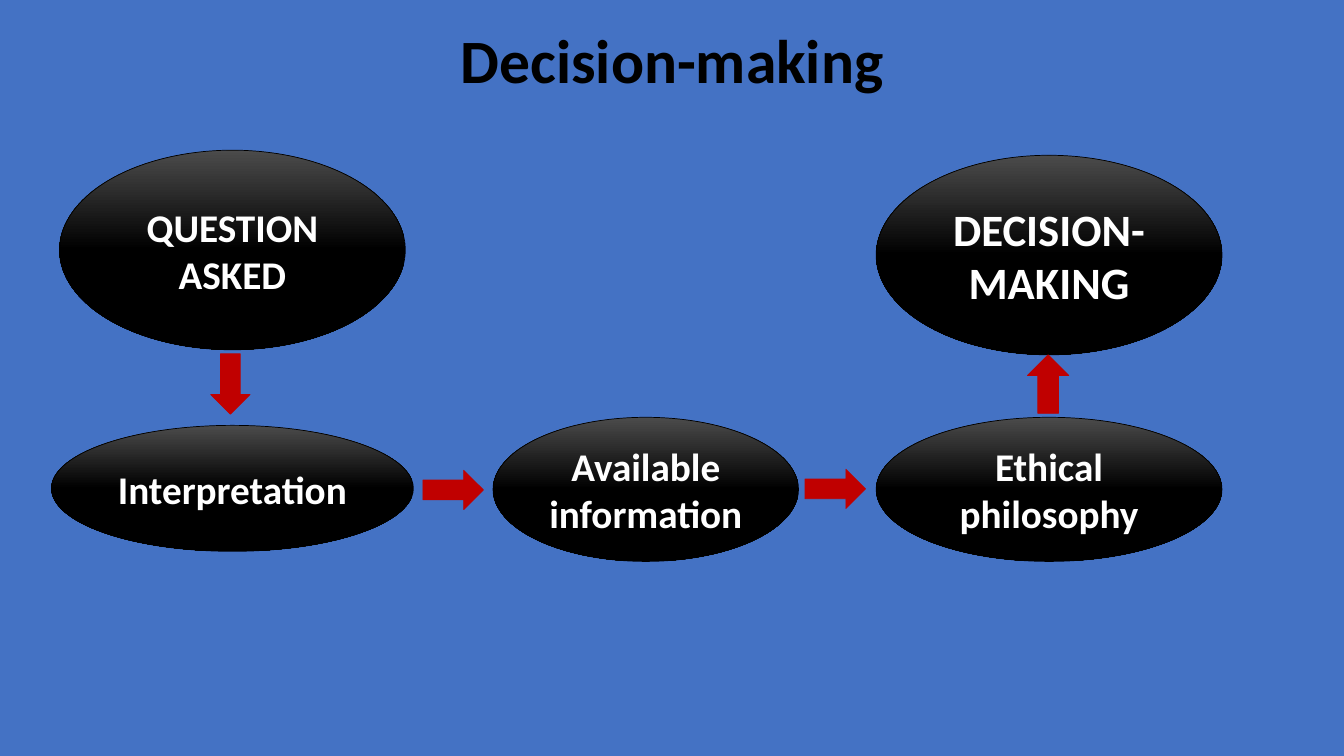
from dataclasses import dataclass

from pptx import Presentation
from pptx.dml.color import RGBColor
from pptx.enum.shapes import MSO_SHAPE as Preset
from pptx.enum.text import MSO_ANCHOR as Anchor, PP_ALIGN as Align
from pptx.shapes.autoshape import Shape
from pptx.slide import Slide
from pptx.util import Inches, Pt


@dataclass(frozen=True)
class Theme:
    """Colours, font and sizes used on the slide."""
    background: RGBColor = RGBColor(0x44, 0x72, 0xC4)
    dark: RGBColor = RGBColor(0, 0, 0)
    sheen: RGBColor = RGBColor(0x4B, 0x4B, 0x4B)
    light: RGBColor = RGBColor(0xFF, 0xFF, 0xFF)
    arrow: RGBColor = RGBColor(0xC0, 0, 0)
    font: str = "Calibri"
    title_size: int = 44
    step_size: int = 28
    outcome_size: int = 32
    line_width: float = 0.5


THEME = Theme()


@dataclass(frozen=True)
class Step:
    """An oval holding one step of the process."""
    text: str
    left: float
    top: float
    width: float
    height: float
    size: int = THEME.step_size


@dataclass(frozen=True)
class Arrow:
    """A down arrow turned towards the next step."""
    left: float
    top: float
    rotation: int = 0
    width: float = 0.39
    height: float = 0.6


STEPS = [
    Step("QUESTION ASKED", 0.59, 1.49, 3.43, 1.98),
    Step("Interpretation", 0.51, 4.22, 3.59, 1.25),
    Step("Available information", 4.89, 4.14, 3.03, 1.43),
    Step("Ethical philosophy", 8.69, 4.14, 3.43, 1.43),
    Step("DECISION-MAKING", 8.69, 1.54, 3.43, 1.98, THEME.outcome_size),
]

ARROWS = [
    Arrow(2.09, 3.51),
    Arrow(4.3, 4.56, 270),
    Arrow(8.09, 4.55, 270),
    Arrow(10.19, 3.52, 180, 0.41, 0.58),
]


def write_text(shape: Shape, text: str, size: int, color: RGBColor) -> None:
    """Write bold text centred in the shape."""
    frame = shape.text_frame
    frame.text = text
    frame.word_wrap = True
    frame.vertical_anchor = Anchor.MIDDLE
    paragraph = frame.paragraphs[0]
    paragraph.alignment = Align.CENTER
    font = paragraph.runs[0].font
    font.name, font.size, font.bold = THEME.font, Pt(size), True
    font.color.rgb = color


def add_preset(slide: Slide, preset: Preset, item: Step | Arrow, line: RGBColor) -> Shape:
    """Add a shadowless preset shape with a thin outline."""
    shape = slide.shapes.add_shape(
        preset, Inches(item.left), Inches(item.top), Inches(item.width), Inches(item.height)
    )
    shape.shadow.inherit = False
    shape.line.color.rgb = line
    shape.line.width = Pt(THEME.line_width)
    return shape


def add_title(slide: Slide, text: str) -> None:
    """Add the slide title."""
    title = slide.shapes.add_textbox(Inches(1.67), Inches(0.01), Inches(10), Inches(1.25))
    write_text(title, text, THEME.title_size, THEME.dark)
    title.text_frame.paragraphs[0].line_spacing = 0.9


def add_step(slide: Slide, step: Step) -> None:
    """Add a step as an oval shaded from grey to black."""
    oval = add_preset(slide, Preset.OVAL, step, THEME.dark)
    oval.fill.gradient()
    oval.fill.gradient_angle = 270
    shades = ((0, THEME.sheen), (0.5, THEME.dark))
    for stop, (position, color) in zip(oval.fill.gradient_stops, shades):
        stop.position = position
        stop.color.rgb = color
    write_text(oval, step.text, step.size, THEME.light)


def add_arrow(slide: Slide, arrow: Arrow) -> None:
    """Add a block arrow between two steps."""
    shape = add_preset(slide, Preset.DOWN_ARROW, arrow, THEME.arrow)
    shape.rotation = arrow.rotation
    shape.fill.solid()
    shape.fill.fore_color.rgb = THEME.arrow


def main() -> None:
    """Build and save the slide."""
    presentation = Presentation()
    presentation.slide_width = Inches(13.33)
    presentation.slide_height = Inches(7.5)
    slide = presentation.slides.add_slide(presentation.slide_layouts[6])
    slide.background.fill.solid()
    slide.background.fill.fore_color.rgb = THEME.background
    add_title(slide, "Decision-making")
    for step in STEPS:
        add_step(slide, step)
    for arrow in ARROWS:
        add_arrow(slide, arrow)
    presentation.save("out.pptx")


if __name__ == "__main__":
    main()
